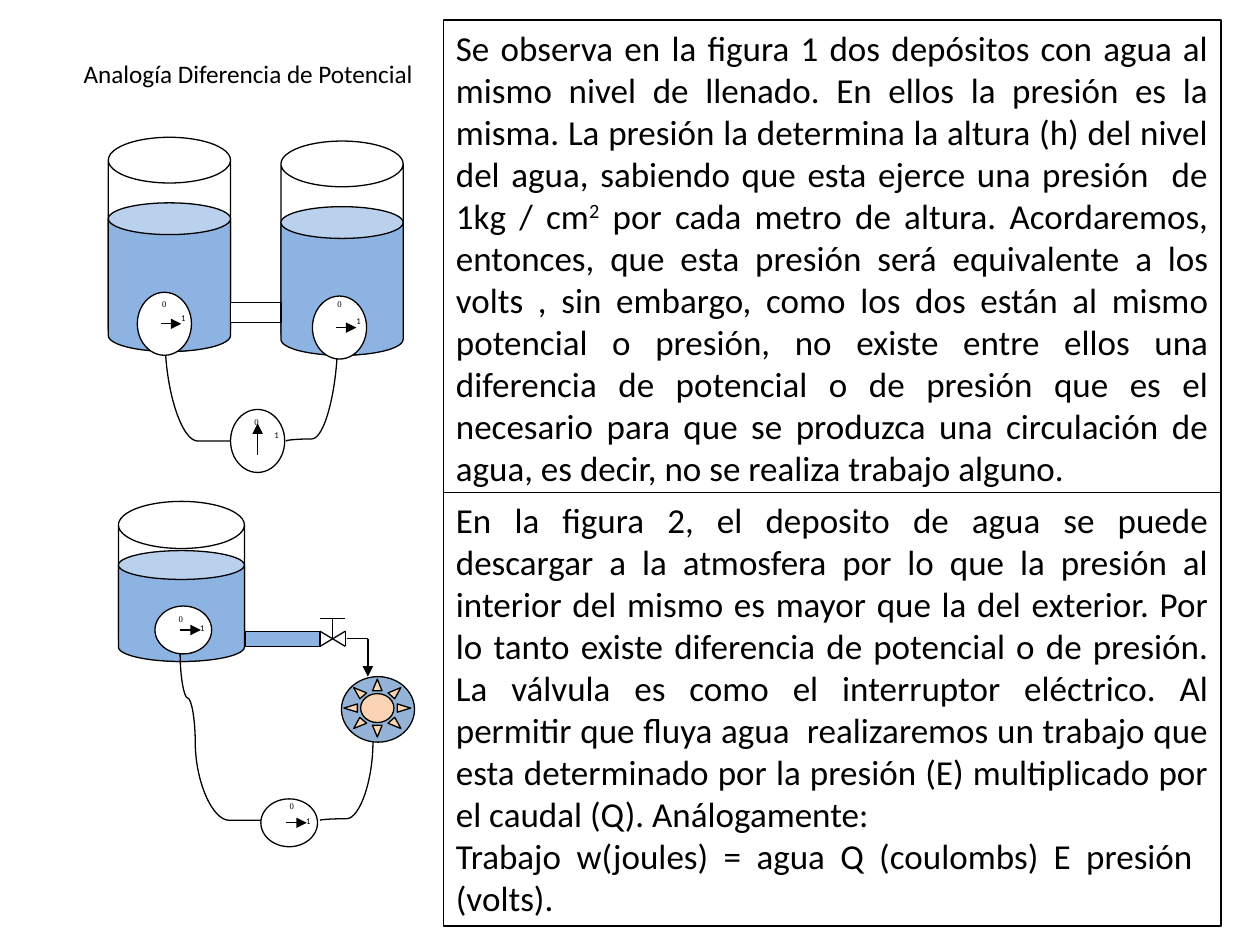
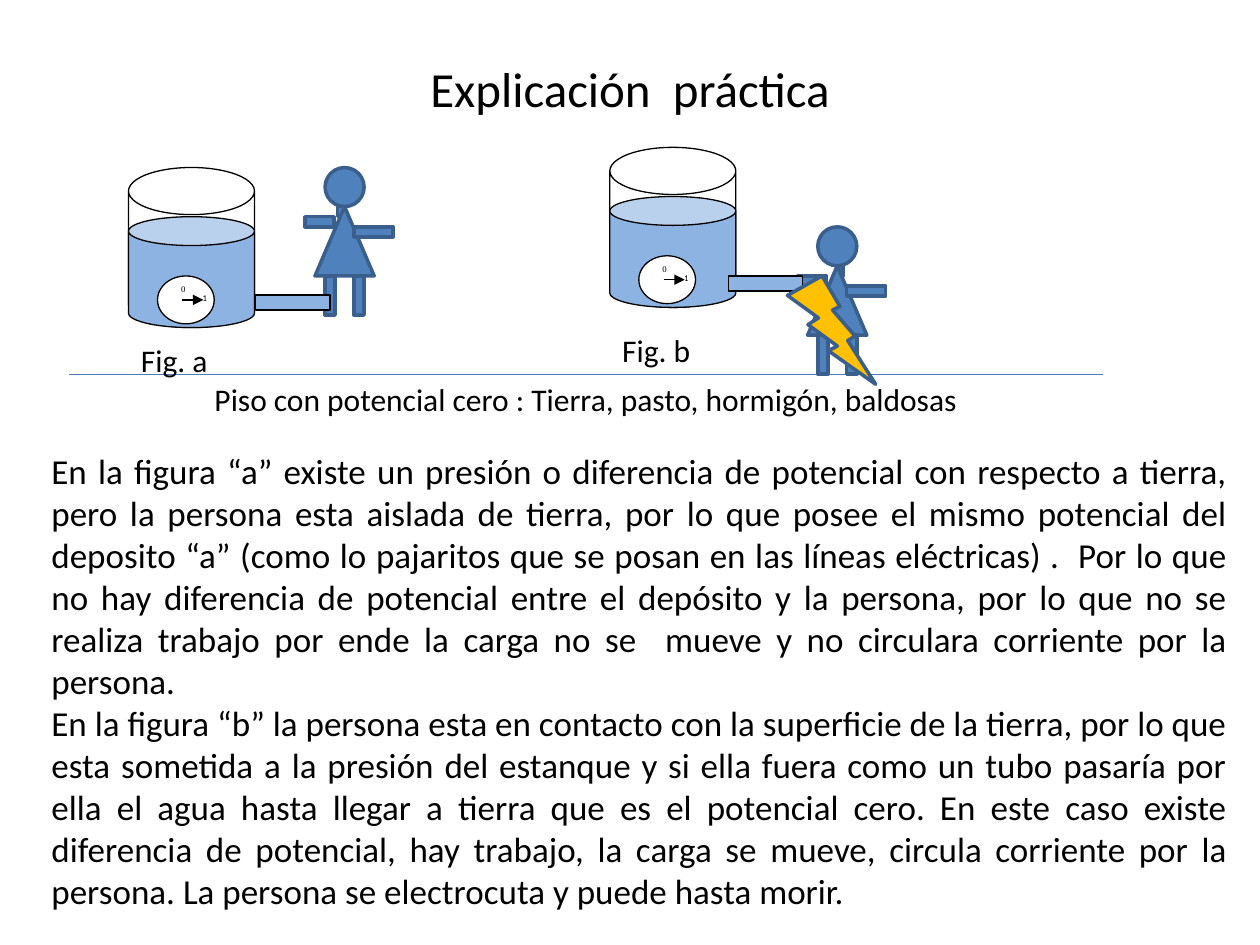
from dataclasses import dataclass

from lxml import etree
from pptx import Presentation
from pptx.dml.color import RGBColor
from pptx.enum.shapes import MSO_CONNECTOR, MSO_SHAPE
from pptx.enum.text import MSO_ANCHOR, MSO_AUTO_SIZE, PP_ALIGN
from pptx.oxml.ns import qn
from pptx.util import Inches, Pt

STRAIGHT, CURVE = MSO_CONNECTOR.STRAIGHT, MSO_CONNECTOR.CURVE
CAN, OVAL, RECTANGLE = MSO_SHAPE.CAN, MSO_SHAPE.OVAL, MSO_SHAPE.RECTANGLE
TRIANGLE, SUN, BOLT = MSO_SHAPE.ISOSCELES_TRIANGLE, MSO_SHAPE.SUN, MSO_SHAPE.LIGHTNING_BOLT
LEFT, CENTER, JUSTIFY = PP_ALIGN.LEFT, PP_ALIGN.CENTER, PP_ALIGN.JUSTIFY
TOP, MIDDLE = MSO_ANCHOR.TOP, MSO_ANCHOR.MIDDLE
NO_AUTOFIT = MSO_AUTO_SIZE.NONE
TITLE_ONLY = 5

# The slide is a grid of 10 columns by 7.5 rows of square cells
SLIDE_WIDTH, SLIDE_HEIGHT = Inches(10), Inches(7.5)
CELL = SLIDE_WIDTH // 10


@dataclass(frozen=True)
class Theme:
    font: str = "Calibri"
    dial_font: str = "Times New Roman"
    ink: str = "000000"
    empty: str = "FFFFFF"
    water: str = "8DB3E2"
    wheel: str = "95B3D7"
    blades: str = "FBD4B4"
    person: str = "4F81BD"
    person_line: str = "3A5F8C"
    floor: str = "4B7EBC"
    bolt: str = "FFC000"
    thin: float = 0.75
    thick: float = 2
    title_size: float = 28
    small_title_size: float = 14.4
    body_size: float = 20
    caption_size: float = 18
    dial_size: float = 5


THEME = Theme()


@dataclass(frozen=True)
class Box:
    left: float
    top: float
    width: float
    height: float

    def inner(self, x: float, y: float, width: float, height: float) -> "Box":
        """A box given as shares of this one."""
        return Box(self.left + x * self.width, self.top + y * self.height,
                   width * self.width, height * self.height)

    def point(self, x: float, y: float) -> tuple[float, float]:
        return self.left + x * self.width, self.top + y * self.height

    def lengths(self) -> tuple[int, ...]:
        return tuple(cells(n) for n in (self.left, self.top, self.width, self.height))


@dataclass(frozen=True)
class Gauge:
    box: Box
    zero: tuple[float, float] = (0.2, 0.04)
    needle: tuple[float, ...] = (0.44, 0.5, 0.81, 0.5)


@dataclass(frozen=True)
class Tank:
    box: Box
    water_depth: float


def cells(count: float) -> int:
    return round(count * CELL)


# Text and basic shapes
def write(shape, *lines: str, size: float, font: str = THEME.font,
          align=LEFT, anchor=TOP) -> None:
    """Fill a shape with paragraphs; a part between ^ marks is superscript."""
    frame = shape.text_frame
    frame.word_wrap = True
    frame.auto_size = NO_AUTOFIT
    frame.vertical_anchor = anchor
    for index, line in enumerate(lines):
        paragraph = frame.add_paragraph() if index else frame.paragraphs[0]
        paragraph.alignment = align
        for part, piece in enumerate(line.split("^")):
            run = paragraph.add_run()
            run.text = piece
            run.font.size, run.font.name = Pt(size), font
            run.font.color.rgb = RGBColor.from_string(THEME.ink)
            if part % 2:
                run.font._element.set("baseline", "30000")


def add_text(slide, box: Box, *lines: str, **text_format) -> None:
    write(slide.shapes.add_textbox(*box.lengths()), *lines, **text_format)


def add_title(slide, box: Box, text: str, size: float) -> None:
    title = slide.shapes.title
    title.left, title.top, title.width, title.height = box.lengths()
    write(title, text, size=size, align=CENTER, anchor=MIDDLE)


def draw(slide, kind, box: Box, fill: str | None, line: str = THEME.ink,
         weight: float = THEME.thin, adjustment: float | None = None):
    shape = slide.shapes.add_shape(kind, *box.lengths())
    shape.shadow.inherit = False
    if fill:
        shape.fill.solid()
        shape.fill.fore_color.rgb = RGBColor.from_string(fill)
    else:
        shape.fill.background()
    shape.line.color.rgb = RGBColor.from_string(line)
    shape.line.width = Pt(weight)
    if adjustment is not None:
        shape.adjustments[0] = adjustment
    return shape


def connect(slide, start: tuple[float, float], end: tuple[float, float], *,
            kind=STRAIGHT, color: str = THEME.ink, arrow: bool = False):
    connector = slide.shapes.add_connector(kind, *map(cells, (*start, *end)))
    connector.line.color.rgb = RGBColor.from_string(color)
    connector.line.width = Pt(THEME.thin)
    properties = connector._element.spPr
    if arrow:
        etree.SubElement(properties.find(qn("a:ln")), qn("a:tailEnd"), type="triangle")
    etree.SubElement(properties, qn("a:effectLst"))
    return connector


def hose(slide, start: tuple[float, float], end: tuple[float, float], bend: float) -> None:
    """A curve leaving its start vertically: a horizontal one turned by 90 degrees."""
    middle_x, middle_y = (start[0] + end[0]) / 2, (start[1] + end[1]) / 2
    half_x, half_y = (end[0] - start[0]) / 2, (end[1] - start[1]) / 2
    curve = connect(slide, (middle_x - half_y, middle_y + half_x),
                    (middle_x + half_y, middle_y - half_x), kind=CURVE)
    properties = curve._element.spPr
    properties.find(qn("a:xfrm")).set("rot", str(90 * 60000))
    geometry = properties.find(qn("a:prstGeom"))
    guides = geometry.find(qn("a:avLst"))
    if guides is None:
        guides = etree.SubElement(geometry, qn("a:avLst"))
    etree.SubElement(guides, qn("a:gd"), name="adj1", fmla=f"val {round(bend * 100000)}")


# Parts of the drawings
def draw_tank(slide, tank: Tank) -> None:
    box = tank.box
    water = Box(box.left, box.top + box.height - tank.water_depth, box.width, tank.water_depth)
    draw(slide, CAN, box, THEME.empty, adjustment=0.374)
    draw(slide, CAN, water, THEME.water, adjustment=0.26)


def draw_gauge(slide, gauge: Gauge) -> None:
    draw(slide, OVAL, gauge.box, THEME.empty)
    for digit, place, font in (("0", gauge.zero, THEME.dial_font),
                               ("1", (0.58, 0.22), THEME.font)):
        add_text(slide, gauge.box.inner(*place, 0.49, 0.67), digit,
                 size=THEME.dial_size, font=font, align=CENTER)
    connect(slide, gauge.box.point(*gauge.needle[:2]),
            gauge.box.point(*gauge.needle[2:]), arrow=True)


def draw_pipe(slide, left: float, top: float) -> None:
    draw(slide, RECTANGLE, Box(left, top, 0.59, 0.12), THEME.water)


def draw_valve(slide, left: float, top: float) -> None:
    right, bottom, handle = left + 0.2, top + 0.12, top - 0.1
    middle_x, middle_y = left + 0.1, top + 0.06
    for start, end in (((left, bottom), (right, top)), ((left, top), (right, bottom)),
                       ((left, top), (left, bottom)), ((right, top), (right, bottom)),
                       ((middle_x, middle_y), (middle_x, handle)),
                       ((left, handle), (right, handle))):
        connect(slide, start, end)


def draw_person(slide, left: float, top: float, neck: float) -> None:
    for kind, x, y, width, height in (
            (RECTANGLE, neck, 0.31, 0.05, 0.08),
            (OVAL, 0.16, 0, 0.31, 0.31),
            (TRIANGLE, 0.08, 0.31, 0.47, 0.55),
            (RECTANGLE, 0.16, 0.86, 0.08, 0.31),
            (RECTANGLE, 0.39, 0.86, 0.08, 0.31),
            (RECTANGLE, 0, 0.39, 0.23, 0.08),
            (RECTANGLE, 0.39, 0.47, 0.31, 0.08)):
        draw(slide, kind, Box(left + x, top + y, width, height), THEME.person,
             THEME.person_line, THEME.thick)


def draw_measured_tank(slide, left: float, top: float, gauge_x: float, gauge_y: float) -> None:
    draw_tank(slide, Tank(Box(left, top, 1, 1.27), 0.88))
    draw_gauge(slide, Gauge(Box(left + gauge_x, top + gauge_y, 0.45, 0.38)))


# Slide 1: potential difference analogy
EQUAL_LEVELS = (
    "Se observa en la figura 1 dos depósitos con agua al mismo nivel de llenado. En ellos la "
    "presión es la misma. La presión la determina la altura (h) del nivel del agua, sabiendo que "
    "esta ejerce una presión  de 1kg / cm^2^ por cada metro de altura. Acordaremos, entonces, que "
    "esta presión será equivalente a los volts , sin embargo, como los dos están al mismo "
    "potencial o presión, no existe entre ellos una diferencia de potencial o de presión que es "
    "el necesario para que se produzca una circulación de agua, es decir, no se realiza trabajo "
    "alguno.",
)
DISCHARGE = (
    "En la figura 2, el deposito de agua se puede descargar a la atmosfera por lo que la presión "
    "al interior del mismo es mayor que la del exterior. Por lo tanto existe diferencia de "
    "potencial o de presión. La válvula es como el interruptor eléctrico. Al permitir que fluya "
    "agua  realizaremos un trabajo que esta determinado por la presión (E) multiplicado por el "
    "caudal (Q). Análogamente:",
    "Trabajo w(joules) = agua Q (coulombs) E presión  (volts).",
)


def build_analogy(slide) -> None:
    add_title(slide, Box(0.5, 0.3, 2.94, 0.56), "Analogía Diferencia de Potencial",
              THEME.small_title_size)

    # Figure 1: two tanks at the same level
    for left, top in ((0.86, 1.09), (2.23, 1.12)):
        draw_tank(slide, Tank(Box(left, top, 0.97, 1.7), 1.18))
    draw(slide, RECTANGLE, Box(1.83, 2.4, 0.4, 0.16), THEME.empty)
    hose(slide, (1.31, 2.68), (1.83, 3.5), 1)
    hose(slide, (2.68, 2.68), (2.27, 3.5), 0.98)
    for gauge in (Gauge(Box(1.83, 3.25, 0.43, 0.5), (0.21, 0.02), (0.5, 0.72, 0.5, 0.22)),
                  Gauge(Box(1.09, 2.32, 0.43, 0.5), (0.23, 0)),
                  Gauge(Box(2.48, 2.35, 0.43, 0.5), (0.23, -0.06))):
        draw_gauge(slide, gauge)

    # Figure 2: a tank that drives a wheel
    draw_pipe(slide, 1.95, 5.01)
    draw_valve(slide, 2.54, 5.01)
    connect(slide, (2.75, 5.07), (2.92, 5.07))
    connect(slide, (2.92, 5.07), (2.92, 5.37), arrow=True)
    draw_measured_tank(slide, 0.94, 3.98, 0.29, 0.83)
    hose(slide, (1.55, 5.89), (1.43, 5.19), 0.5)
    hose(slide, (1.55, 5.89), (2.09, 6.51), 1)
    hose(slide, (2.96, 5.89), (2.54, 6.51), 0.98)
    draw_gauge(slide, Gauge(Box(2.07, 6.34, 0.45, 0.38), (0.29, -0.08)))
    draw(slide, OVAL, Box(2.71, 5.37, 0.58, 0.52), THEME.wheel)
    draw(slide, SUN, Box(2.73, 5.39, 0.53, 0.46), THEME.blades, adjustment=0.25)

    for top, height, lines in ((0.16, 3.75, EQUAL_LEVELS), (3.91, 3.44, DISCHARGE)):
        panel = draw(slide, RECTANGLE, Box(3.52, top, 6.17, height), None)
        write(panel, *lines, size=THEME.body_size, align=JUSTIFY)


# Slide 2: practical explanation
PRACTICE = (
    "En la figura “a” existe un presión o diferencia de potencial con respecto a tierra, pero la "
    "persona esta aislada de tierra, por lo que posee el mismo potencial del deposito “a” (como lo "
    "pajaritos que se posan en las líneas eléctricas) .  Por lo que no hay diferencia de potencial "
    "entre el depósito y la persona, por lo que no se realiza trabajo por ende la carga no se  "
    "mueve y no circulara corriente por la persona.",
    "En la figura “b” la persona esta en contacto con la superficie de la tierra, por lo que esta "
    "sometida a la presión del estanque y si ella fuera como un tubo pasaría por ella el agua "
    "hasta llegar a tierra que es el potencial cero. En este caso existe diferencia de potencial, "
    "hay trabajo, la carga se mueve, circula corriente por la persona. La persona se electrocuta y "
    "puede hasta morir.",
)


def build_practice(slide) -> None:
    add_title(slide, Box(0.5, 0.3, 9, 0.79), "Explicación  práctica", THEME.title_size)
    connect(slide, (0.55, 2.97), (8.75, 2.97), color=THEME.floor)

    # Figure a is isolated from the floor, figure b stands on it
    for person, neck, tank, pipe in (((2.42, 1.33), 0.26, (1.02, 1.33), (2.03, 2.34)),
                                     ((6.33, 1.8), 0.31, (4.84, 1.17), (5.78, 2.19))):
        draw_person(slide, *person, neck)
        draw_measured_tank(slide, *tank, 0.23, 0.86)
        draw_pipe(slide, *pipe)
    draw(slide, BOLT, Box(6.25, 2.19, 0.7, 0.86), THEME.bolt, THEME.person_line, THEME.thick)

    # Captions and text
    add_text(slide, Box(0.86, 2.97, 7.58, 0.71),
             "Piso con potencial cero : Tierra, pasto, hormigón, baldosas",
             size=THEME.caption_size, align=CENTER)
    for left, top, caption in ((1.02, 2.66, "Fig. a"), (4.84, 2.58, "Fig. b")):
        add_text(slide, Box(left, top, 0.94, 0.4), caption, size=THEME.caption_size)
    add_text(slide, Box(0.31, 3.52, 9.53, 3.8), *PRACTICE, size=THEME.body_size, align=JUSTIFY)


def main() -> None:
    presentation = Presentation()
    presentation.slide_width, presentation.slide_height = SLIDE_WIDTH, SLIDE_HEIGHT
    for build in (build_analogy, build_practice):
        build(presentation.slides.add_slide(presentation.slide_layouts[TITLE_ONLY]))
    presentation.save("out.pptx")


if __name__ == "__main__":
    main()
